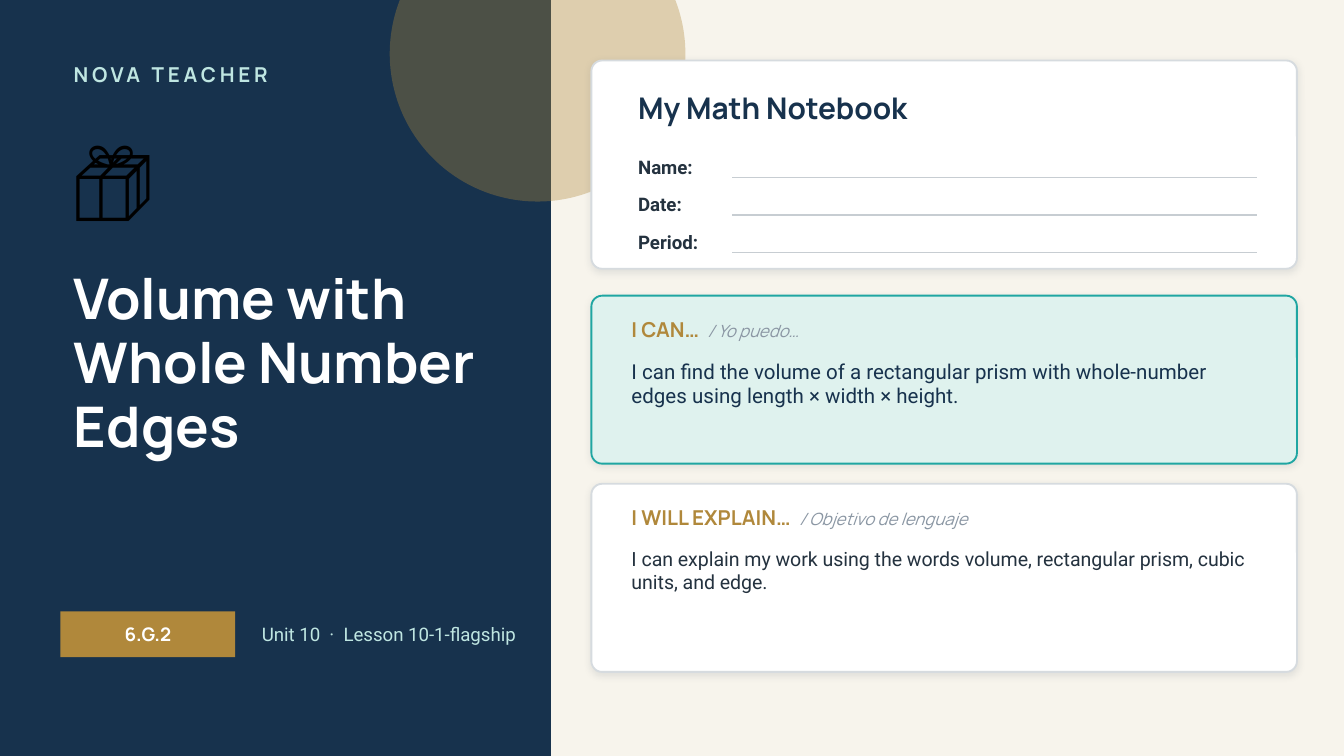
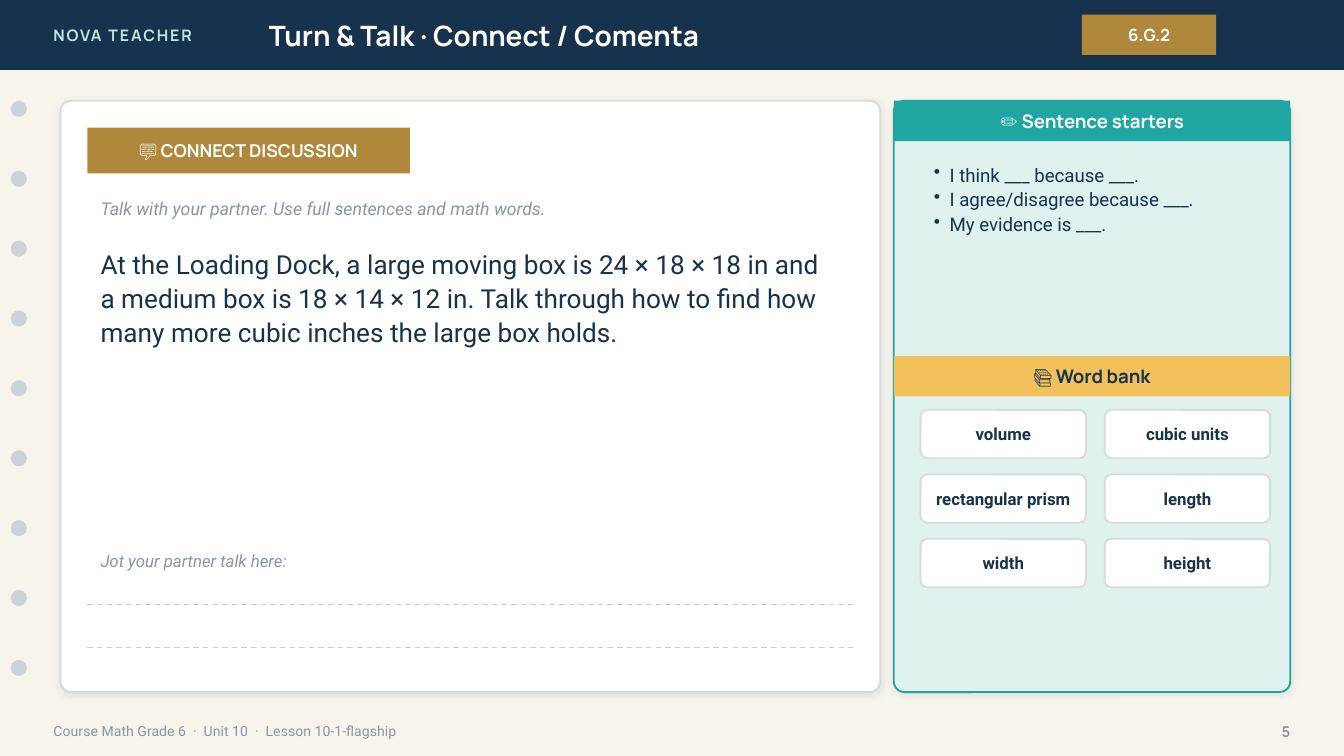
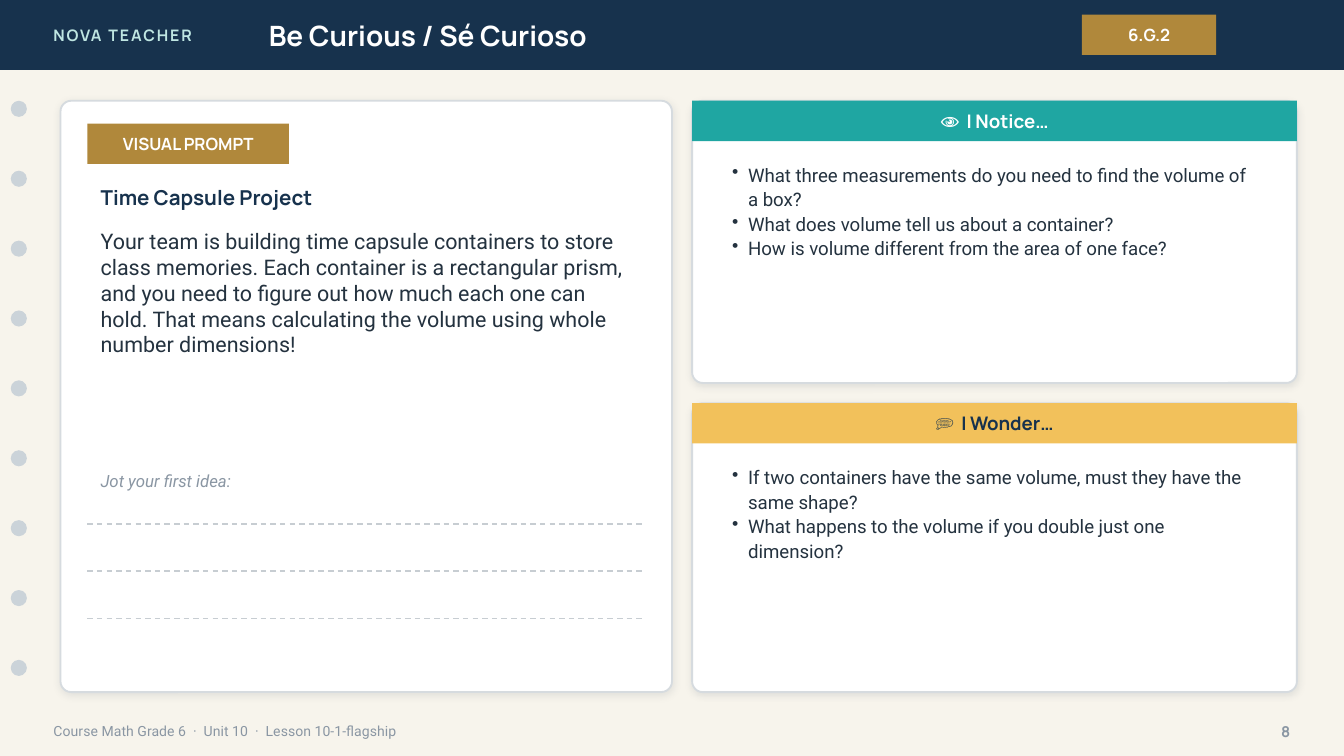
from lxml.etree import SubElement
from pptx import Presentation
from pptx.dml.color import RGBColor
from pptx.enum.dml import MSO_LINE
from pptx.enum.shapes import MSO_CONNECTOR, MSO_SHAPE
from pptx.enum.text import MSO_ANCHOR, MSO_AUTO_SIZE, PP_ALIGN
from pptx.oxml.ns import qn
from pptx.util import Pt

NAVY = RGBColor(0x17, 0x32, 0x4D)
CREAM = RGBColor(0xF7, 0xF4, 0xEC)
GOLD = RGBColor(0xB0, 0x88, 0x3B)
AMBER = RGBColor(0xF2, 0xC1, 0x5B)
TEAL = RGBColor(0x1F, 0xA6, 0xA2)
MINT = RGBColor(0xDF, 0xF2, 0xEE)
AQUA = RGBColor(0xBF, 0xE6, 0xE2)
INK = RGBColor(0x24, 0x32, 0x3F)
MUTED = RGBColor(0x8A, 0x96, 0xA3)
BORDER = RGBColor(0xD6, 0xDB, 0xDF)
RULE = RGBColor(0xC7, 0xCD, 0xD2)
HOLE = RGBColor(0xCB, 0xD3, 0xD9)
WHITE = RGBColor(0xFF, 0xFF, 0xFF)
BLACK = RGBColor(0x00, 0x00, 0x00)

HEADING = "Manrope"
BODY = "Roboto"
BRAND = "NOVA TEACHER"
STANDARD = "6.G.2"
LESSON = "Unit 10  ·  Lesson 10-1-flagship"
CARD_RADIUS = 5.76
CHIP_RADIUS = 3.6


def add_run(paragraph, text, font=BODY, size=10, color=INK, bold=False,
            italic=False, tracking=0):
    run = paragraph.add_run()
    run.text = text
    run.font.name = font
    run.font.size = Pt(size)
    run.font.color.rgb = color
    run.font.bold = bold
    run.font.italic = italic
    if tracking:
        run.font._element.set("spc", str(tracking * 100))


def add_bullet(paragraph, indent=8.5):
    properties = paragraph._p.get_or_add_pPr()
    properties.set("marL", str(Pt(indent)))
    properties.set("indent", str(-Pt(indent)))
    SubElement(properties, qn("a:buChar"), char="•")


def write_text(frame, text, align=PP_ALIGN.LEFT, anchor=MSO_ANCHOR.MIDDLE,
               spacing=None, bullets=False, **run_format):
    frame.word_wrap = True
    frame.auto_size = MSO_AUTO_SIZE.NONE
    frame.vertical_anchor = anchor
    for index, line in enumerate(text.split("\n")):
        paragraph = frame.add_paragraph() if index else frame.paragraphs[0]
        paragraph.alignment = align
        if bullets:
            add_bullet(paragraph)
        if spacing:
            paragraph.line_spacing = spacing
        add_run(paragraph, line, **run_format)


class NotebookDeck:
    def __init__(self):
        self.presentation = Presentation()
        self.presentation.slide_width = Pt(720)
        self.presentation.slide_height = Pt(405)
        self.slide = None

    def new_slide(self):
        layout = self.presentation.slide_layouts[5]
        self.slide = self.presentation.slides.add_slide(layout)
        self.slide.background.fill.solid()
        self.slide.background.fill.fore_color.rgb = CREAM

    def title(self, text, x, y, width, height, **text_format):
        title = self.slide.shapes.title
        title.left, title.top = Pt(x), Pt(y)
        title.width, title.height = Pt(width), Pt(height)
        title.element.getparent().append(title.element)
        write_text(title.text_frame, text, font=HEADING, color=WHITE,
                   bold=True, **text_format)

    def text(self, text, x, y, width, height, **text_format):
        box = self.slide.shapes.add_textbox(Pt(x), Pt(y), Pt(width), Pt(height))
        write_text(box.text_frame, text, **text_format)
        return box.text_frame

    def shape(self, kind, x, y, width, height, fill, border=None):
        shape = self.slide.shapes.add_shape(kind, Pt(x), Pt(y), Pt(width), Pt(height))
        shape.shadow.inherit = False
        shape.fill.solid()
        shape.fill.fore_color.rgb = fill
        if border is None:
            shape.line.fill.background()
        else:
            shape.line.color.rgb = border
            shape.line.width = Pt(1)
        return shape

    def rounded(self, x, y, width, height, fill, border, radius):
        shape = self.shape(MSO_SHAPE.ROUNDED_RECTANGLE, x, y, width, height, fill, border)
        shape.adjustments[0] = radius / min(width, height)
        return shape

    def card(self, x, y, width, height, fill=WHITE, border=BORDER):
        card = self.rounded(x, y, width, height, fill, border, CARD_RADIUS)
        effects = card.element.spPr.find(qn("a:effectLst"))
        shadow = SubElement(effects, qn("a:outerShdw"), blurRad=str(Pt(4)),
                            dist=str(Pt(1)), dir="5400000", rotWithShape="0")
        color = SubElement(shadow, qn("a:srgbClr"), val="1C2E42")
        SubElement(color, qn("a:alpha"), val="10000")

    def label(self, text, x, y, width, height, fill=GOLD, color=WHITE, size=10):
        bar = self.shape(MSO_SHAPE.RECTANGLE, x, y, width, height, fill)
        write_text(bar.text_frame, text, align=PP_ALIGN.CENTER, font=HEADING,
                   size=size, color=color, bold=True)

    def chip(self, text, x, y, width, height):
        chip = self.rounded(x, y, width, height, WHITE, BORDER, CHIP_RADIUS)
        write_text(chip.text_frame, text, align=PP_ALIGN.CENTER, size=9,
                   color=NAVY, bold=True)

    def circle(self, x, y, diameter, fill, opacity=100):
        circle = self.shape(MSO_SHAPE.OVAL, x, y, diameter, diameter, fill)
        if opacity < 100:
            color = circle.element.spPr.find(qn("a:solidFill"))[0]
            SubElement(color, qn("a:alpha"), val=str(opacity * 1000))

    def rule(self, x, y, width, dashed=False):
        line = self.slide.shapes.add_connector(
            MSO_CONNECTOR.STRAIGHT, Pt(x), Pt(y), Pt(x + width), Pt(y))
        line.line.color.rgb = RULE
        line.line.width = Pt(0.75)
        if dashed:
            line.line.dash_style = MSO_LINE.DASH
        SubElement(line.element.spPr, qn("a:effectLst"))

    def hint(self, text, x, y, width, height, size=9):
        self.text(text, x, y, width, height, size=size, color=MUTED, italic=True)

    def bullets(self, text, x, y, width, height, color=INK):
        self.text(text, x, y, width, height, anchor=MSO_ANCHOR.TOP,
                  spacing=1.1, bullets=True, color=color)

    def objective(self, heading, translation, text, y, height, size, color,
                  fill=WHITE, border=BORDER):
        self.card(316.8, y, 378, height, fill, border)
        frame = self.text(f"{heading}  ", 331.2, y + 7.2, 349.2, 21.6,
                          font=HEADING, size=11, color=GOLD, bold=True)
        add_run(frame.paragraphs[0], translation, font=HEADING, size=9,
                color=MUTED, italic=True)
        self.text(text, 331.2, y + 30.24, 349.2, height - 34,
                  anchor=MSO_ANCHOR.TOP, size=size, color=color)

    def question_panel(self, heading, questions, y, height, fill, color):
        self.card(370.8, y, 324, height)
        self.label(heading, 370.8, y, 324, 21.6, fill, color)
        self.bullets(questions, 385.2, y + 28.8, 295.2, height - 36)

    def content_slide(self, title, number):
        self.new_slide()
        self.shape(MSO_SHAPE.RECTANGLE, 0, 0, 720, 37.44, NAVY)
        self.text(BRAND, 21.6, 0, 172.8, 37.44, font=HEADING, size=8.5,
                  color=AQUA, bold=True, tracking=1)
        self.title(title, 136.8, 0, 403.2, 37.44, size=15)
        self.label(STANDARD, 579.6, 7.92, 72, 21.6, size=9)
        for index in range(9):
            self.circle(5.76, 54 + index * 37.44, 8.64, HOLE)
        self.text(f"Course Math Grade 6  ·  {LESSON}", 21.6, 381.6, 504, 20.16,
                  size=7.5, color=MUTED)
        self.text(str(number), 662.4, 381.6, 36, 20.16, align=PP_ALIGN.RIGHT,
                  font=HEADING, size=8, color=MUTED, bold=True)


def build_cover(deck):
    deck.new_slide()
    deck.shape(MSO_SHAPE.RECTANGLE, 0, 0, 295.2, 405, NAVY)
    deck.circle(208.8, -50.4, 158.4, GOLD, opacity=35)
    deck.text(BRAND, 32.4, 28.8, 237.6, 21.6, font=HEADING, size=11,
              color=AQUA, bold=True, tracking=2)
    deck.text("📦", 32.4, 61.2, 108, 64.8, font="Calibri", size=44, color=BLACK)
    deck.title("Volume with Whole Number Edges", 32.4, 140.4, 237.6, 122.4,
               anchor=MSO_ANCHOR.TOP, spacing=0.95, size=30)
    deck.label(STANDARD, 32.4, 327.6, 93.6, 24.48)
    deck.text(LESSON, 133.2, 327.6, 151.2, 24.48, color=AQUA)

    deck.card(316.8, 32.4, 378, 111.6)
    deck.text("My Math Notebook", 334.8, 43.2, 345.6, 28.8, font=HEADING,
              size=16, color=NAVY, bold=True)
    for index, field in enumerate(("Name:", "Date:", "Period:")):
        top = 80.64 + index * 20.16
        deck.text(field, 334.8, top, 57.6, 17.28, bold=True)
        deck.rule(392.4, top + 14.4, 280.8)

    deck.objective("I CAN…", "/ Yo puedo…",
                   "I can find the volume of a rectangular prism with whole-number "
                   "edges using length × width × height.",
                   158.4, 90, 11, NAVY, MINT, TEAL)
    deck.objective("I WILL EXPLAIN…", "/ Objetivo de lenguaje",
                   "I can explain my work using the words volume, rectangular prism, "
                   "cubic units, and edge.",
                   259.2, 100.8, 10.5, INK)


def build_discussion(deck):
    deck.content_slide("Turn & Talk · Connect / Comenta", 5)
    deck.card(32.4, 54, 439.2, 316.8)
    deck.label("💬 CONNECT DISCUSSION", 46.8, 68.4, 172.8, 24.48, size=9.5)
    deck.hint("Talk with your partner. Use full sentences and math words.",
              46.8, 100.8, 410.4, 21.6, size=9.5)
    deck.text("At the Loading Dock, a large moving box is 24 × 18 × 18 in and a medium "
              "box is 18 × 14 × 12 in. Talk through how to find how many more cubic "
              "inches the large box holds.",
              46.8, 128.16, 410.4, 144, anchor=MSO_ANCHOR.TOP, spacing=1.08,
              size=14, color=NAVY)
    deck.hint("Jot your partner talk here:", 46.8, 291.6, 410.4, 18)
    for index in range(2):
        deck.rule(46.8, 324 + index * 23.04, 410.4, dashed=True)

    deck.card(478.8, 54, 212.4, 316.8, MINT, TEAL)
    deck.label("✏️ Sentence starters", 478.8, 54, 212.4, 21.6, TEAL)
    deck.bullets("I think ___ because ___.\n"
                 "I agree/disagree because ___.\n"
                 "My evidence is ___.",
                 493.2, 82.8, 187.2, 100.8, NAVY)
    deck.label("📚 Word bank", 478.8, 190.8, 212.4, 21.6, AMBER, NAVY)
    words = ("volume", "cubic units", "rectangular prism", "length", "width", "height")
    for index, word in enumerate(words):
        row, column = divmod(index, 2)
        deck.chip(word, 493.2 + column * 98.64, 219.6 + row * 34.56, 88.56, 25.92)


def build_curiosity(deck):
    deck.content_slide("Be Curious / Sé Curioso", 8)
    deck.card(32.4, 54, 327.6, 316.8)
    deck.label("VISUAL PROMPT", 46.8, 66.24, 108, 21.6, size=9)
    deck.text("Time Capsule Project", 46.8, 95.04, 298.8, 21.6, font=HEADING,
              size=11, color=NAVY, bold=True)
    deck.text("Your team is building time capsule containers to store class memories. "
              "Each container is a rectangular prism, and you need to figure out how "
              "much each one can hold. That means calculating the volume using whole "
              "number dimensions!",
              46.8, 118.8, 298.8, 122.4, anchor=MSO_ANCHOR.TOP, size=11.5)
    deck.hint("Jot your first idea:", 46.8, 248.4, 288, 18)
    for index in range(3):
        deck.rule(46.8, 280.8 + index * 25.2, 298.8, dashed=True)

    deck.question_panel("👁  I Notice…",
                        "What three measurements do you need to find the volume of a box?\n"
                        "What does volume tell us about a container?\n"
                        "How is volume different from the area of one face?",
                        54, 151.2, TEAL, WHITE)
    deck.question_panel("💭  I Wonder…",
                        "If two containers have the same volume, must they have the same shape?\n"
                        "What happens to the volume if you double just one dimension?",
                        216, 154.8, AMBER, NAVY)


def main():
    deck = NotebookDeck()
    build_cover(deck)
    build_discussion(deck)
    build_curiosity(deck)
    deck.presentation.save("out.pptx")


if __name__ == "__main__":
    main()
